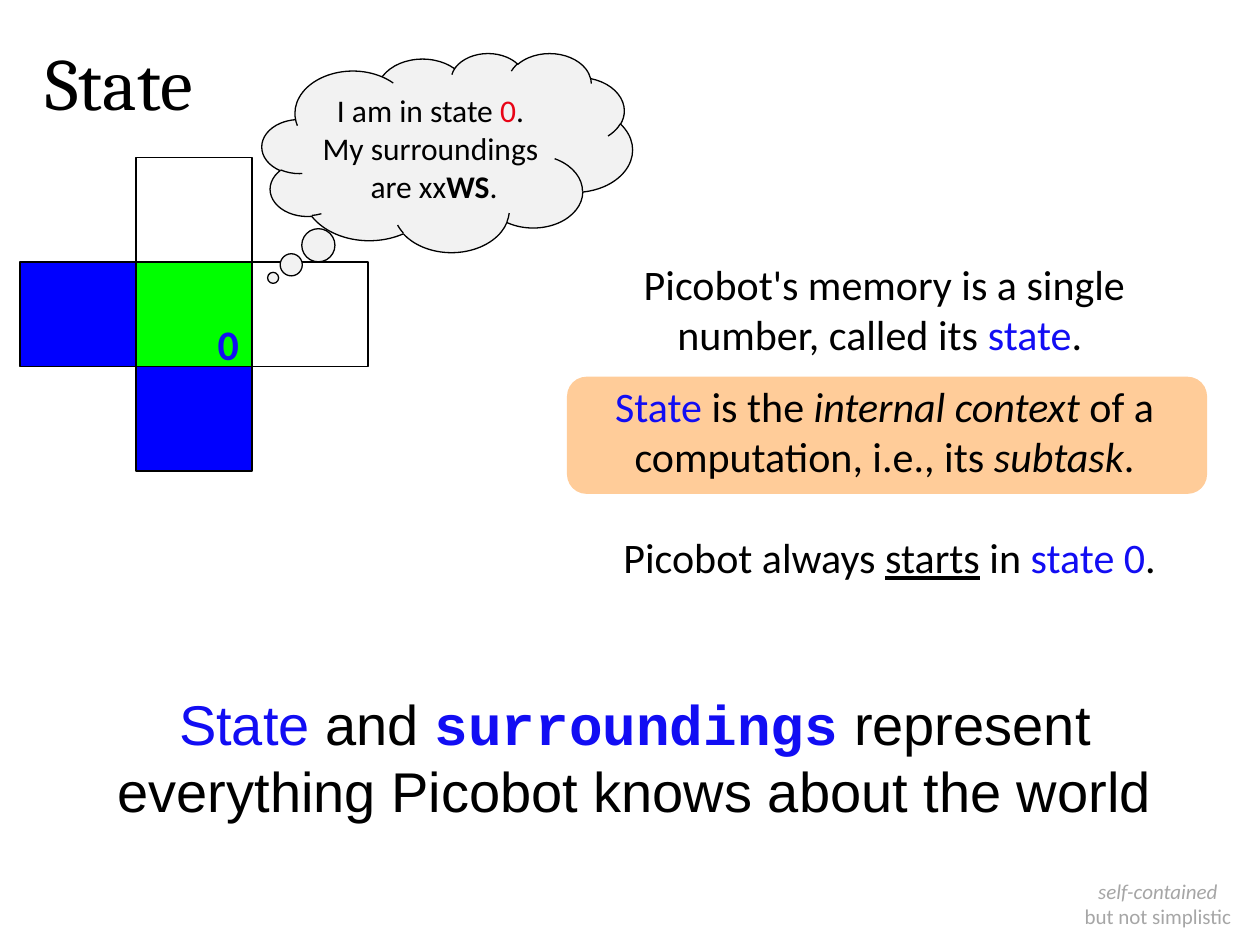
"""Build the slide that explains the state of Picobot."""
from dataclasses import dataclass

from pptx import Presentation
from pptx import util as u
from pptx.dml.color import RGBColor
from pptx.enum import shapes, text

KIND = shapes.MSO_SHAPE
MID = text.PP_ALIGN.CENTER
LEFT = text.PP_ALIGN.LEFT


@dataclass(frozen=True)
class Theme:
    ink: str = "000000"
    key: str = "120DF3"
    red: str = "E80416"
    gray: str = "A6A6A6"
    wall: str = "0000FF"
    bot: str = "00FF00"
    peach: str = "FFCC99"
    cloud: str = "F2F2F2"
    head: str = "Cambria"
    main: str = "Calibri"
    sans: str = "Arial"
    mono: str = "Courier New"
    title: int = 42
    big: int = 32
    body: int = 24
    talk: int = 18
    small: int = 12
    line: float = 0.75


class Deck:
    def __init__(self, theme):
        self.theme = theme
        self.file = Presentation()
        self.file.slide_width, self.file.slide_height = u.Inches(10), u.Inches(7.5)
        self.slide = self.file.slides.add_slide(self.file.slide_layouts[5])

    def fill_text(self, frame, paras, size, font=None, tint=None, align=MID, gap=0, wrap=True):
        frame.word_wrap = wrap
        for i, runs in enumerate(paras):
            para = frame.paragraphs[0] if i == 0 else frame.add_paragraph()
            para.alignment = align
            para.space_before = u.Pt(gap)
            for words, look in runs:
                run = para.add_run()
                run.text = words
                face = run.font
                face.size = u.Pt(size)
                face.name = look.get("font", font or self.theme.main)
                face.color.rgb = RGBColor.from_string(look.get("tint", tint or self.theme.ink))
                face.bold = look.get("bold", False)
                face.italic = look.get("italic", False)
                face.underline = look.get("under", False)

    def title(self, box, words):
        head = self.slide.shapes.title
        head.left, head.top, head.width, head.height = map(u.Inches, box)
        head.text_frame.vertical_anchor = text.MSO_ANCHOR.TOP
        head.text_frame.auto_size = text.MSO_AUTO_SIZE.NONE
        self.fill_text(head.text_frame, [[(words, {})]], self.theme.title, self.theme.head, align=LEFT)

    def text(self, box, paras, size, **look):
        item = self.slide.shapes.add_textbox(*map(u.Inches, box))
        item.text_frame.auto_size = text.MSO_AUTO_SIZE.SHAPE_TO_FIT_TEXT
        self.fill_text(item.text_frame, paras, size, **look)

    def shape(self, kind, box, fill=None, edge=True):
        item = self.slide.shapes.add_shape(kind, *map(u.Inches, box))
        item.shadow.inherit = False
        if fill:
            item.fill.solid()
            item.fill.fore_color.rgb = RGBColor.from_string(fill)
        else:
            item.fill.background()
        if edge:
            item.line.color.rgb = RGBColor.from_string(self.theme.ink)
            item.line.width = u.Pt(self.theme.line)
        else:
            item.line.fill.background()
        return item

    def cloud(self, box, tail, paras):
        item = self.shape(KIND.CLOUD_CALLOUT, box, self.theme.cloud)
        item.adjustments[0], item.adjustments[1] = tail
        item.text_frame.vertical_anchor = text.MSO_ANCHOR.MIDDLE
        self.fill_text(item.text_frame, paras, self.theme.talk, wrap=False)

    def grid(self, left, top, wide, high, cells):
        for col, row, fill in cells:
            self.shape(KIND.RECTANGLE, (left + col * wide, top + row * high, wide, high), fill)


def main():
    t = Theme()
    deck = Deck(t)
    key, slant, plain = {"tint": t.key}, {"italic": True}, {}

    deck.shape(KIND.ROUNDED_RECTANGLE, (4.5, 2.99, 5.08, 0.93), t.peach, edge=False)
    deck.title((0.26, 0.24, 3.25, 0.8), "State")
    deck.text((4.52, 2, 5, 1.92), [
        [("Picobot's memory is a single number, called its ", plain), ("state", key), (". ", plain)],
        [("State", key), (" is the ", plain), ("internal context ", slant),
         ("of a computation, i.e., its ", plain), ("subtask", slant), (".", plain)],
    ], t.body, gap=t.body / 2)
    deck.grid(0.16, 1.25, 0.92, 0.83, [
        (1, 1, t.bot), (0, 1, t.wall), (1, 0, None), (1, 2, t.wall), (2, 1, None)])
    deck.text((0.58, 5.42, 8.92, 1.18), [
        [("State", key), (" and ", plain),
         ("surroundings", {"font": t.mono, "tint": t.key, "bold": True}),
         (" represent everything Picobot knows about the world", plain)],
    ], t.big, font=t.sans, gap=t.big / 2)
    deck.text((4.52, 4.17, 5.08, 0.5), [
        [("Picobot always ", plain), ("starts", {"under": True}), (" in ", plain),
         ("state 0", key), (".", plain)],
    ], t.body, gap=t.body / 2)
    deck.cloud((2.08, 0.42, 2.94, 1.58), (-0.47, 0.63), [
        [("I am in state ", plain), ("0", {"tint": t.red}), (". ", plain)],
        [("My surroundings ", plain)],
        [("are xx", plain), ("WS", {"bold": True}), (".", plain)],
    ])
    deck.text((1.63, 2.48, 0.37, 0.51), [[("0", {"bold": True})]],
              t.body, tint=t.key, align=LEFT, wrap=False)
    deck.text((8.5, 6.92, 1.38, 0.5), [[("self-contained", slant)], [("but not simplistic", plain)]],
              t.small, tint=t.gray, wrap=False)
    deck.file.save("out.pptx")


if __name__ == "__main__":
    main()
